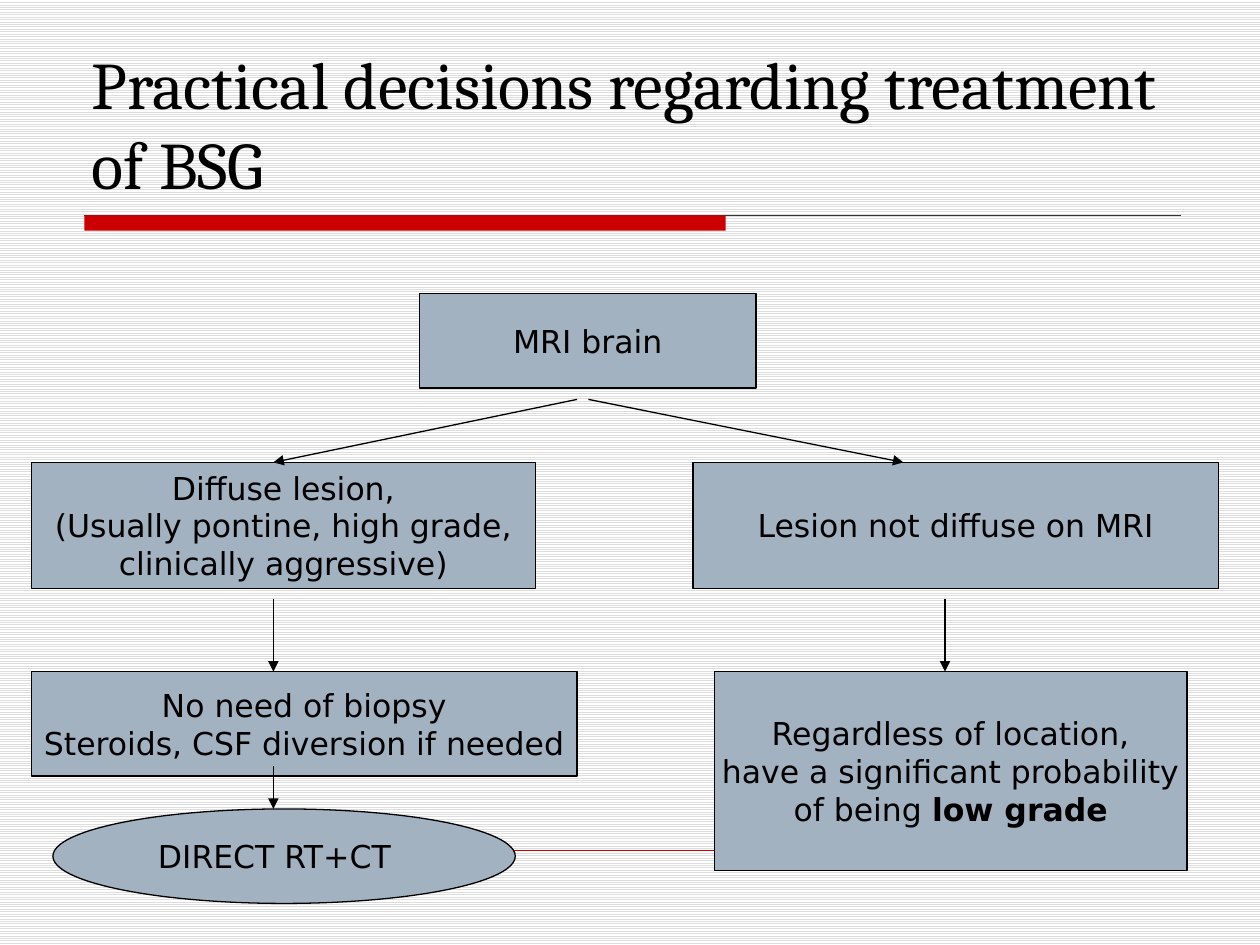
from lxml import etree
from pptx import Presentation
from pptx.dml.color import RGBColor
from pptx.enum.dml import MSO_PATTERN
from pptx.enum.shapes import MSO_CONNECTOR, MSO_SHAPE
from pptx.enum.text import MSO_ANCHOR, PP_ALIGN
from pptx.oxml.ns import qn
from pptx.util import Inches, Pt

RECT, OVAL = MSO_SHAPE.RECTANGLE, MSO_SHAPE.OVAL
BLACK = RGBColor(0x00, 0x00, 0x00)
WHITE = RGBColor(0xFF, 0xFF, 0xFF)
STRIPE = RGBColor(0xDD, 0xDD, 0xDD)
RED = RGBColor(0xCC, 0x00, 0x00)
RULE = RGBColor(0x33, 0x33, 0x33)
STEEL = RGBColor(0xA3, 0xB2, 0xC1)
TITLE_FONT, BODY_FONT = "Cambria", "DejaVu Sans"

TITLE = "Practical decisions regarding treatment of BSG"
BOLD = "low grade"

# shape, (left, top, width, height), lines of text
NODES = [
    (RECT, (3.33, 2.33, 2.67, 0.75), ["MRI brain"]),
    (RECT, (0.25, 3.67, 4, 1),
     ["Diffuse lesion,", "(Usually pontine, high grade,", "clinically aggressive)"]),
    (RECT, (0.25, 5.33, 4.33, 0.83),
     ["No need of biopsy", "Steroids, CSF diversion if needed"]),
    (OVAL, (0.42, 6.42, 3.67, 0.75), ["DIRECT RT+CT"]),
    (RECT, (5.5, 3.67, 4.17, 1), ["Lesion not diffuse on MRI"]),
    (RECT, (5.67, 5.33, 3.75, 1.58),
     ["Regardless of location,", "have a significant probability", "of being " + BOLD]),
]

# start x, start y, end x, end y
ARROWS = [
    (4.58, 3.17, 2.17, 3.67),
    (4.67, 3.17, 7.17, 3.67),
    (2.17, 4.75, 2.17, 5.33),
    (2.17, 6.08, 2.17, 6.42),
    (7.5, 4.75, 7.5, 5.33),
]


def style_span(span, font, size, bold=None):
    span.font.name = font
    span.font.size = Pt(size)
    span.font.color.rgb = BLACK
    span.font.bold = bold


def add_line(page, ends, color, width, arrow=False):
    line = page.shapes.add_connector(MSO_CONNECTOR.STRAIGHT, *map(Inches, ends))
    line.line.color.rgb = color
    line.line.width = Pt(width)
    if arrow:
        etree.SubElement(line.line._get_or_add_ln(), qn("a:tailEnd"), type="triangle")
    etree.SubElement(line._element.spPr, qn("a:effectLst"))


def add_filled(page, kind, place, color):
    shape = page.shapes.add_shape(kind, *map(Inches, place))
    shape.shadow.inherit = False
    shape.fill.solid()
    shape.fill.fore_color.rgb = color
    return shape


def add_node(page, kind, place, lines):
    node = add_filled(page, kind, place, STEEL)
    node.line.color.rgb = BLACK
    node.line.width = Pt(0.75)
    frame = node.text_frame
    frame.word_wrap = False
    frame.vertical_anchor = MSO_ANCHOR.MIDDLE
    if kind == OVAL:
        frame.margin_right = Inches(0.25)  # label sits slightly left of centre
    frame.text = "\n".join(lines)
    for para in frame.paragraphs:
        para.alignment = PP_ALIGN.CENTER
        plain, found, _ = para.text.partition(BOLD)
        para.runs[0].text = plain
        style_span(para.runs[0], BODY_FONT, 18)
        if found:
            span = para.add_run()
            span.text = BOLD
            style_span(span, BODY_FONT, 18, bold=True)


def add_title(page):
    box = page.shapes.add_textbox(*map(Inches, (0.63, 0.33, 8.75, 1.33)))
    frame = box.text_frame
    frame.word_wrap = True
    frame.vertical_anchor = MSO_ANCHOR.BOTTOM
    frame.text = TITLE
    style_span(frame.paragraphs[0].runs[0], TITLE_FONT, 38)


def main():
    deck = Presentation()
    deck.slide_width, deck.slide_height = Inches(10), Inches(7.5)
    page = deck.slides.add_slide(deck.slide_layouts[6])

    backdrop = page.background.fill
    backdrop.patterned()
    backdrop.pattern = MSO_PATTERN.LIGHT_HORIZONTAL
    backdrop.fore_color.rgb = STRIPE
    backdrop.back_color.rgb = WHITE

    add_line(page, (0.67, 1.71, 9.37, 1.71), RULE, 0.75)
    bar = add_filled(page, RECT, (0.67, 1.71, 5.09, 0.12), RED)
    bar.line.fill.background()
    add_line(page, (0.67, 6.75, 9.33, 6.75), RED, 0.25)

    add_title(page)
    for node in NODES:
        add_node(page, *node)
    for ends in ARROWS:
        add_line(page, ends, BLACK, 0.75, arrow=True)

    deck.save("out.pptx")


if __name__ == "__main__":
    main()
